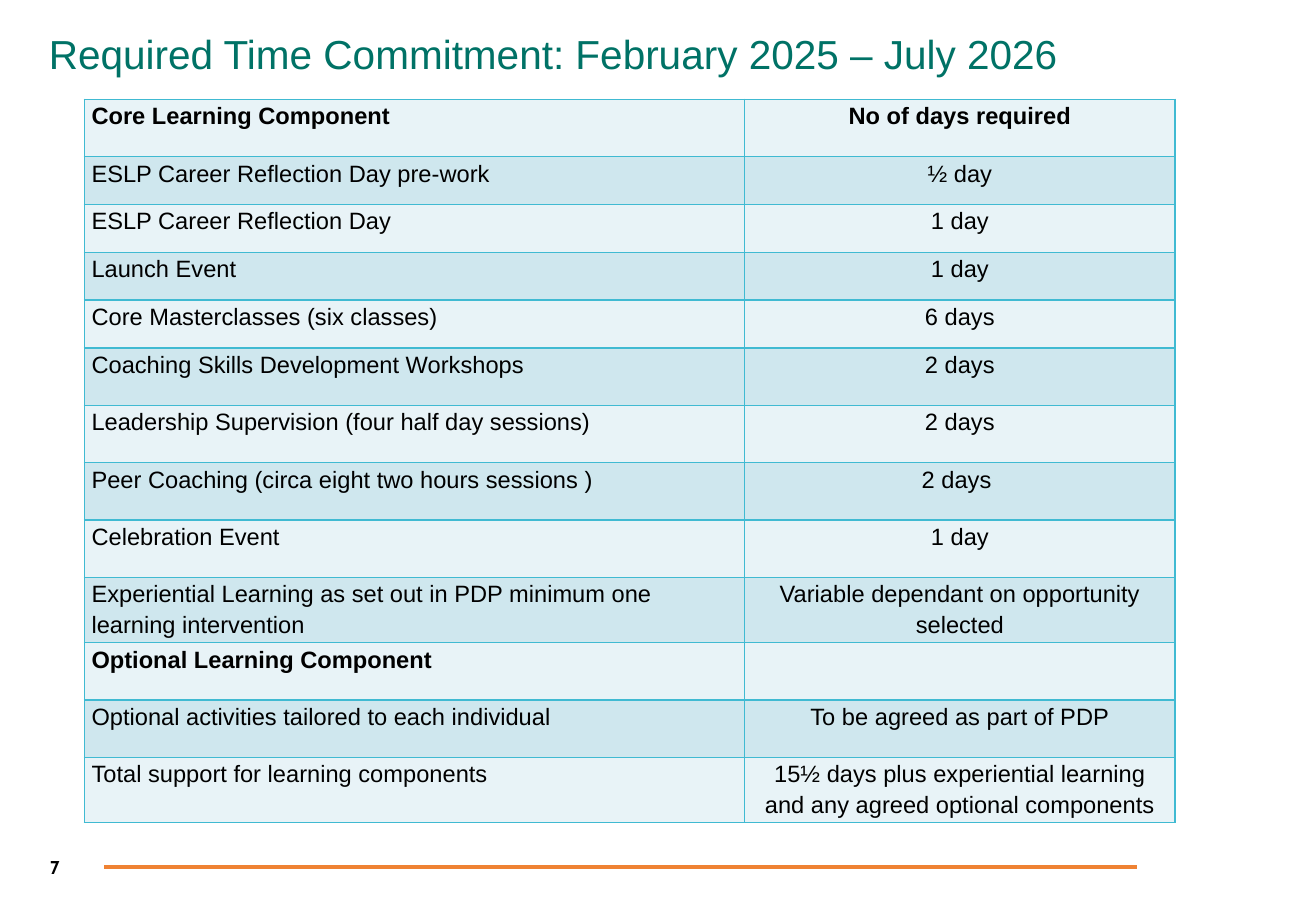
import pptx
import pptx.util
from lxml import etree
from pptx.dml.color import RGBColor
from pptx.enum.shapes import MSO_CONNECTOR
from pptx.enum.text import MSO_ANCHOR, PP_ALIGN
from pptx.oxml.ns import qn

WIDTH, HEIGHT = pptx.util.Inches(10.83), pptx.util.Inches(7.5)
GREEN = RGBColor(0x00, 0x72, 0x66)
BLACK = RGBColor(0x00, 0x00, 0x00)
ORANGE = RGBColor(0xEF, 0x82, 0x33)
BORDER = RGBColor(0x40, 0xBA, 0xD2)
BANDS = RGBColor(0xE8, 0xF3, 0xF7), RGBColor(0xCF, 0xE7, 0xEE)

COLUMN_SHARES = 5.43, 3.54
TALL, SHORT = 6, 5  # row heights in grid units
HEADINGS = "Core Learning Component", "No of days required", "Optional Learning Component"
ROWS = [
    (TALL, HEADINGS[0], HEADINGS[1]),
    (SHORT, "ESLP Career Reflection Day pre-work", "½ day"),
    (SHORT, "ESLP Career Reflection Day", "1 day"),
    (SHORT, "Launch Event", "1 day"),
    (SHORT, "Core Masterclasses (six classes)", "6 days"),
    (TALL, "Coaching Skills Development Workshops", "2 days"),
    (TALL, "Leadership Supervision (four half day sessions)", "2 days"),
    (TALL, "Peer Coaching (circa eight two hours sessions )", "2 days "),
    (TALL, "Celebration Event", "1 day"),
    (TALL, "Experiential Learning as set out in PDP minimum one learning intervention",
     "Variable dependant on opportunity selected"),
    (TALL, HEADINGS[2], ""),
    (TALL, "Optional activities tailored to each individual", "To be agreed as part of PDP"),
    (TALL, "Total support for learning components",
     "15½ days plus experiential learning and any agreed optional components"),
]


def share(left, top, width, height):
    """Turn shares of the slide's size into a box."""
    return int(left * WIDTH), int(top * HEIGHT), int(width * WIDTH), int(height * HEIGHT)


def add_run(p, text, size, color=BLACK, font="Arial", bold=False):
    r = p.add_run()
    r.text = text
    r.font.name, r.font.size, r.font.bold = font, pptx.util.Pt(size), bold
    r.font.color.rgb = color


def add_title(s, box, text):
    tf = s.shapes.add_textbox(*box).text_frame
    tf.word_wrap = True
    p = tf.paragraphs[0]
    p.line_spacing, p.space_after = 1.15, pptx.util.Pt(10)
    add_run(p, text, 24, GREEN)


def set_borders(cell):
    tcPr = cell._tc.get_or_add_tcPr()
    for i, side in enumerate(("lnL", "lnR", "lnT", "lnB")):
        ln = etree.Element(qn("a:" + side), w=str(pptx.util.Pt(1)))
        fill = etree.SubElement(ln, qn("a:solidFill"))
        etree.SubElement(fill, qn("a:srgbClr"), val=str(BORDER))
        tcPr.insert(i, ln)


def fill_cell(cell, text, band, centred):
    cell.fill.solid()
    cell.fill.fore_color.rgb = band
    set_borders(cell)
    cell.margin_left = cell.margin_right = pptx.util.Inches(0.06)
    cell.margin_top = cell.margin_bottom = 0
    p = cell.text_frame.paragraphs[0]
    p.alignment = PP_ALIGN.CENTER if centred else PP_ALIGN.LEFT
    p.line_spacing, p.space_after = 1.15, pptx.util.Pt(10 if centred else 4)
    if text:
        add_run(p, text, 14, bold=text in HEADINGS)


def add_commitment_table(s, box):
    table = s.shapes.add_table(len(ROWS), len(COLUMN_SHARES), *box).table
    table.first_row = table.horz_banding = False
    width, height = box[2:]
    for column, part in zip(table.columns, COLUMN_SHARES):
        column.width = int(width * part / sum(COLUMN_SHARES))
    units = sum(row[0] for row in ROWS)
    for i, (size, *texts) in enumerate(ROWS):
        table.rows[i].height = int(height * size / units)
        for j, text in enumerate(texts):
            fill_cell(table.cell(i, j), text, BANDS[i % 2], centred=j == 1)


def add_footer(s, box, number):
    """Place the page number at the left of the box and a rule across its middle."""
    left, top, width, height = box
    middle = top + height // 2
    rule = s.shapes.add_connector(
        MSO_CONNECTOR.STRAIGHT, left + int(width * 0.06), middle, left + width, middle)
    rule.line.color.rgb = ORANGE
    rule.line.width = pptx.util.Pt(2.25)
    etree.SubElement(rule._element.spPr, qn("a:effectLst"))
    tf = s.shapes.add_textbox(left, top, int(width * 0.15), height).text_frame
    tf.word_wrap = True
    tf.vertical_anchor = MSO_ANCHOR.MIDDLE
    add_run(tf.paragraphs[0], number, 11, font="Cabin", bold=True)


def main():
    prs = pptx.Presentation()
    prs.slide_width, prs.slide_height = WIDTH, HEIGHT
    s = prs.slides.add_slide(prs.slide_layouts[6])
    add_footer(s, share(0.029, 0.925, 0.835, 0.053), "7")
    add_title(s, share(0.028, 0.017, 0.909, 0.072),
              "Required Time Commitment: February 2025 – July 2026")
    add_commitment_table(s, share(0.064, 0.109, 0.829, 0.777))
    prs.save("out.pptx")


if __name__ == "__main__":
    main()
